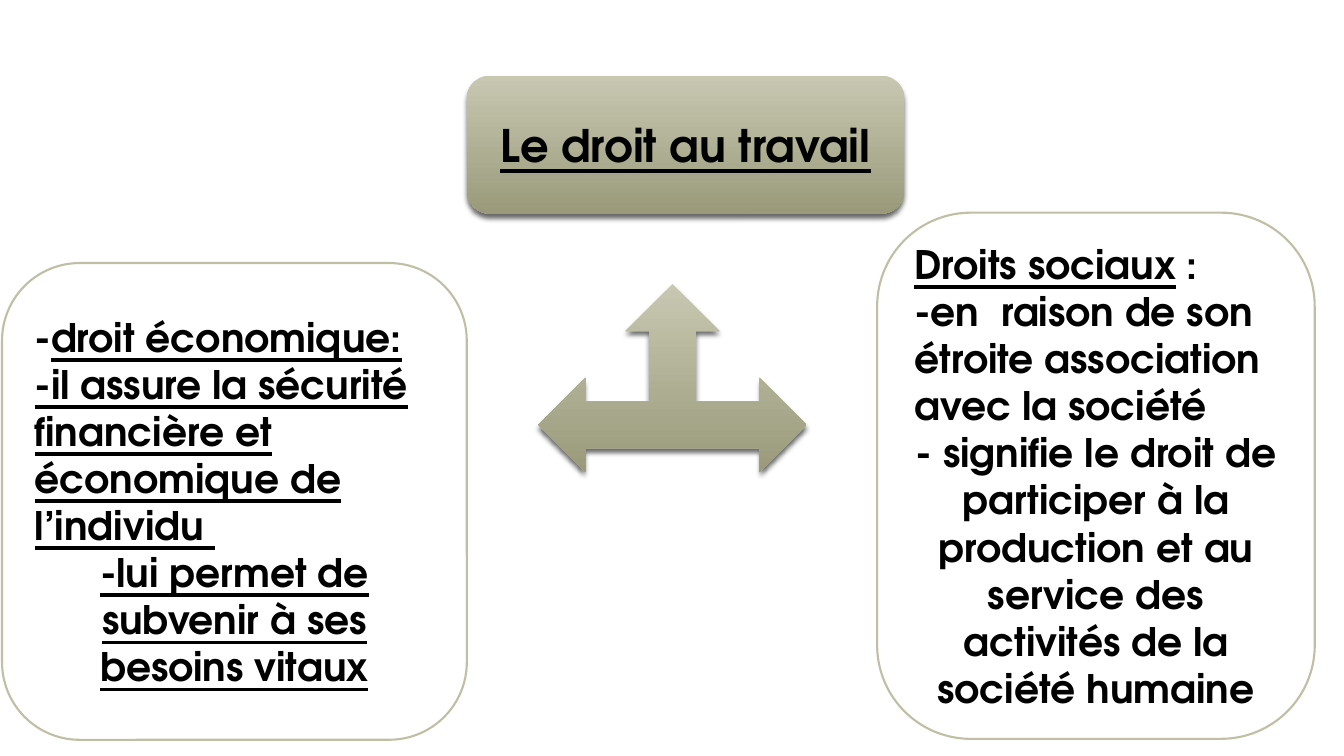
import pptx
import pptx.util
import pptx.dml.color
import pptx.enum.shapes
import pptx.enum.text
import pptx.oxml
import pptx.oxml.ns

Inches = pptx.util.Inches
SHAPE = pptx.enum.shapes.MSO_SHAPE
ALIGN = pptx.enum.text.PP_ALIGN
MIDDLE = pptx.enum.text.MSO_ANCHOR.MIDDLE
COLORS = {"text": "000000", "card": "FFFFFF", "border": "BFBFA5",
          "light": "C8C8B2", "dark": "9A9A7B"}
SHADOW = ('<a:effectLst %s><a:outerShdw blurRad="50800" dist="38100" dir="5400000" '
          'rotWithShape="0"><a:srgbClr val="000000"><a:alpha val="60000"/></a:srgbClr>'
          '</a:outerShdw></a:effectLst>') % pptx.oxml.ns.nsdecls("a")


class Deck:
    """Holds the style and the current slide."""

    font = "TeX Gyre Adventor"

    def __init__(self, prs):
        self.s = prs.slides.add_slide(prs.slide_layouts[5])

    def color(self, name):
        return pptx.dml.color.RGBColor.from_string(COLORS[name])

    def shape(self, kind, box):
        return self.s.shapes.add_shape(kind, *map(Inches, box))

    def add_text(self, tf, paragraphs, size):
        tf.word_wrap = True
        tf.vertical_anchor = MIDDLE
        for i, (align, runs) in enumerate(paragraphs):
            p = tf.add_paragraph() if i else tf.paragraphs[0]
            p.alignment = align
            for text, underline in runs:
                r = p.add_run()
                r.text = text
                r.font.name = self.font
                r.font.size = pptx.util.Pt(size)
                r.font.bold = True
                r.font.underline = underline
                r.font.color.rgb = self.color("text")

    def raised(self, kind, box):
        sp = self.shape(kind, box)
        sp.fill.gradient()
        sp.fill.gradient_angle = 270
        for stop, name, position in zip(sp.fill.gradient_stops, ("light", "dark"), (0, 1)):
            stop.color.rgb = self.color(name)
            stop.position = position
        sp.line.fill.background()
        sp._element.spPr.append(pptx.oxml.parse_xml(SHADOW))

    def card(self, box, radius, paragraphs):
        sp = self.shape(SHAPE.ROUNDED_RECTANGLE, box)
        sp.adjustments[0] = radius
        sp.shadow.inherit = False
        sp.fill.solid()
        sp.fill.fore_color.rgb = self.color("card")
        sp.line.color.rgb = self.color("border")
        sp.line.width = pptx.util.Pt(1.5)
        self.add_text(sp.text_frame, paragraphs, 28)

    def title(self, box, text):
        self.raised(SHAPE.ROUNDED_RECTANGLE, box)
        sp = self.s.shapes.title
        sp.left, sp.top, sp.width, sp.height = map(Inches, box)
        self.add_text(sp.text_frame, [(ALIGN.CENTER, [(text, True)])], 32)
        self.s.shapes._spTree.append(sp._element)


def main():
    prs = pptx.Presentation()
    prs.slide_width, prs.slide_height = Inches(13.33), Inches(7.5)
    deck = Deck(prs)
    deck.raised(SHAPE.LEFT_RIGHT_UP_ARROW, (5.34, 2.82, 2.66, 1.86))
    deck.card((0.02, 2.61, 4.61, 4.73), 0.167, [
        (ALIGN.LEFT, [("-", False), ("droit économique:", True)]),
        (ALIGN.LEFT, [("-il assure la sécurité financière et économique de l’individu ", True)]),
        (ALIGN.CENTER, [("-lui permet de subvenir à ses besoins vitaux", True)]),
    ])
    deck.card((8.7, 2.11, 4.34, 5.22), 0.214, [
        (ALIGN.LEFT, [("Droits sociaux", True), (" :", False)]),
        (ALIGN.LEFT, [("-en  raison de son étroite association avec la société", False)]),
        (ALIGN.CENTER, [("- signifie le droit de participer à la production et au service "
                         "des activités de la société humaine", False)]),
    ])
    deck.title((4.63, 0.75, 4.34, 1.37), "Le droit au travail")
    prs.save("out.pptx")


if __name__ == "__main__":
    main()
